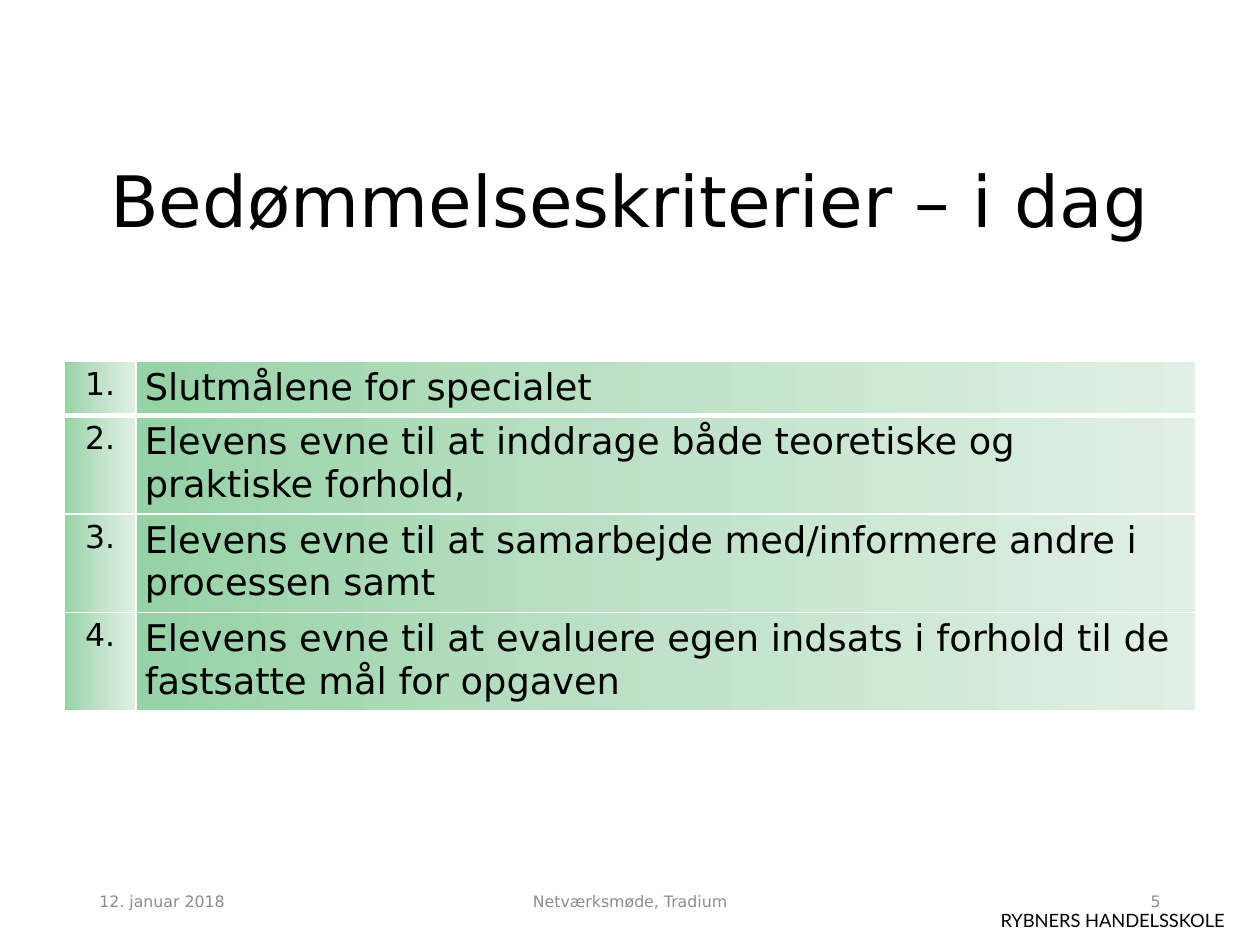
from lxml import etree
from pptx import Presentation
from pptx import util as u
from pptx.dml.color import RGBColor
from pptx.enum import text
from pptx.oxml.ns import qn

BLACK = RGBColor(0x00, 0x00, 0x00)
GREY = RGBColor(0x8C, 0x8C, 0x8C)
WHITE = RGBColor(0xFF, 0xFF, 0xFF)
GREENS = {
    0: RGBColor(0x96, 0xD2, 0xA6),
    50: RGBColor(0xC0, 0xE2, 0xC8),
    100: RGBColor(0xE0, 0xF0, 0xE4),
}
LEFT, MID, RIGHT = text.PP_ALIGN.LEFT, text.PP_ALIGN.CENTER, text.PP_ALIGN.RIGHT
TOP, CENTER, BOTTOM = (
    text.MSO_ANCHOR.TOP, text.MSO_ANCHOR.MIDDLE, text.MSO_ANCHOR.BOTTOM)


def assign(item, values):
    for key, value in values.items():
        setattr(item, key, value)


def tint(parent, color):
    etree.SubElement(parent, qn("a:srgbClr"), val=str(color))


class Deck:
    font = "DejaVu Sans"

    def __init__(self, width, height):
        self.file = Presentation()
        assign(self.file, {"slide_width": u.Inches(width),
                           "slide_height": u.Inches(height)})
        self.slide = self.file.slides.add_slide(self.file.slide_layouts[6])

    def fill_text(self, frame, words, size, align=LEFT, color=BLACK, font=None):
        para = frame.paragraphs[0]
        para.alignment = align
        run = para.add_run()
        run.text = words
        assign(run.font, {"size": u.Pt(size), "name": font or self.font})
        run.font.color.rgb = color
        return para

    def label(self, place, words, size, anchor=CENTER, **style):
        box = self.slide.shapes.add_textbox(*map(u.Inches, place))
        frame = box.text_frame
        assign(frame, {"word_wrap": True, "vertical_anchor": anchor})
        return self.fill_text(frame, words, size, **style)

    def edge(self, props, side, width):
        line = etree.SubElement(props, qn(f"a:ln{side}"), w=str(u.Pt(width)))
        tint(etree.SubElement(line, qn("a:solidFill")), WHITE)

    def fade(self, props):
        grad = etree.SubElement(props, qn("a:gradFill"), rotWithShape="1")
        stops = etree.SubElement(grad, qn("a:gsLst"))
        for point, color in GREENS.items():
            stop = etree.SubElement(stops, qn("a:gs"), pos=str(point * 1000))
            tint(stop, color)
        etree.SubElement(grad, qn("a:lin"), ang="0", scaled="0")

    def cell(self, cell, row, words, size, align):
        assign(cell, {
            "margin_left": u.Inches(0.07), "margin_right": u.Inches(0.07),
            "margin_top": u.Inches(0.04), "margin_bottom": u.Inches(0.04),
            "vertical_anchor": TOP,
        })
        self.fill_text(cell.text_frame, words, size, align)
        props = cell._tc.get_or_add_tcPr()
        widths = {"L": 1, "R": 1, "T": 3 if row == 1 else 1,
                  "B": 3 if row == 0 else 1}
        for side, width in widths.items():
            self.edge(props, side, width)
        self.fade(props)

    def table(self, left, top, cols, rows, goals):
        place = map(u.Inches, (left, top, sum(cols), sum(rows)))
        grid = self.slide.shapes.add_table(len(rows), len(cols), *place).table
        for col, width in zip(grid.columns, cols):
            col.width = u.Inches(width)
        for row, height in enumerate(rows):
            grid.rows[row].height = u.Inches(height)
            self.cell(grid.cell(row, 0), row, f"{row + 1}.", 18, MID)
            self.cell(grid.cell(row, 1), row, goals[row], 21, LEFT)


def main():
    deck = Deck(10, 7.5)
    deck.label((6.24, 7.17, 3.58, 0.28), "RYBNERS HANDELSSKOLE", 10.5,
               anchor=TOP, align=RIGHT, font="Lato")
    title = deck.label((0.69, 0.71, 8.62, 1.27), "Bedømmelseskriterier – i dag",
                       40.5, anchor=BOTTOM, align=MID)
    title.line_spacing = 0.9
    foot = [
        (0.69, 2.25, "12. januar 2018", LEFT),
        (3.31, 3.38, "Netværksmøde, Tradium", MID),
        (7.06, 2.25, "5", RIGHT),
    ]
    for left, width, words, align in foot:
        deck.label((left, 6.95, width, 0.4), words, 9, align=align, color=GREY)
    goals = [
        "Slutmålene for specialet",
        "Elevens evne til at inddrage både teoretiske og praktiske forhold,",
        "Elevens evne til at samarbejde med/informere andre i processen samt",
        "Elevens evne til at evaluere egen indsats i forhold til de "
        "fastsatte mål for opgaven",
    ]
    deck.table(0.51, 2.87, [0.57, 8.41], [0.42] + [0.78] * 3, goals)
    deck.file.save("out.pptx")


if __name__ == "__main__":
    main()
